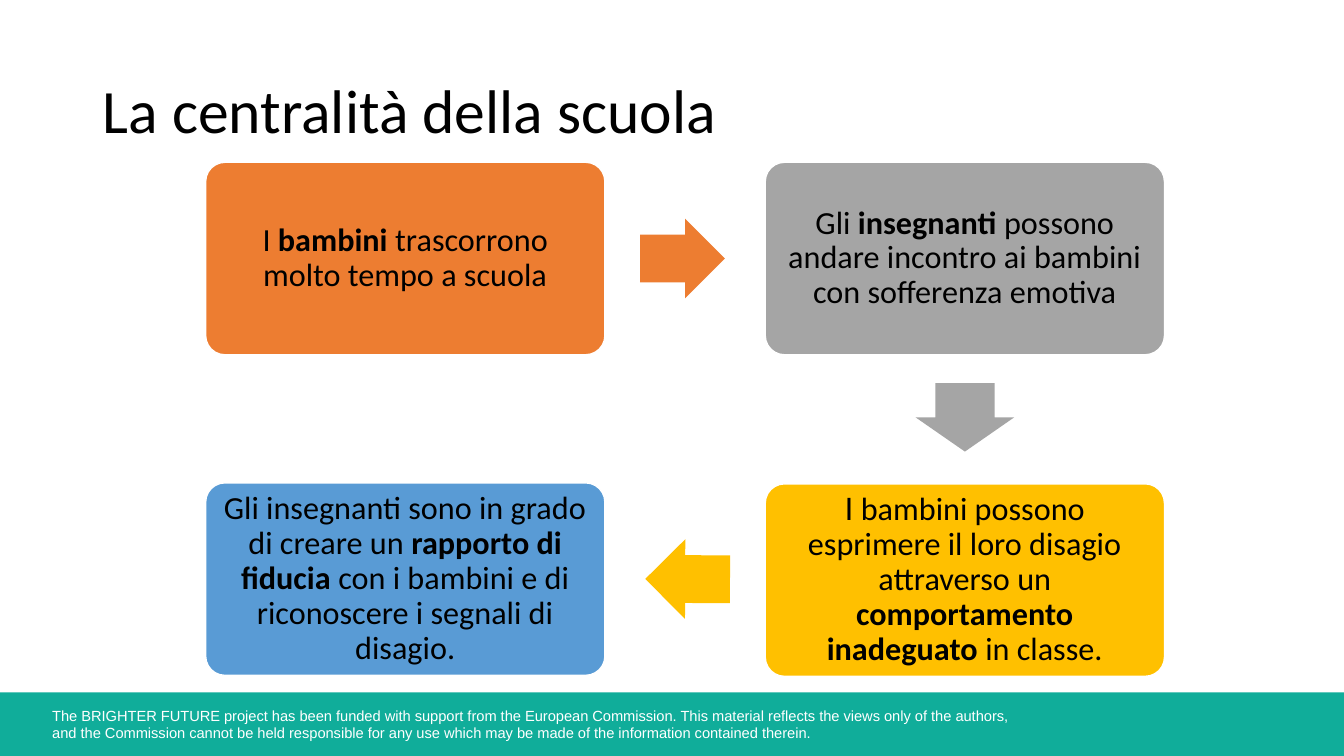
import pptx
import pptx.util
import pptx.dml.color
import pptx.enum.shapes
import pptx.enum.text

Inches = pptx.util.Inches
SHAPE = pptx.enum.shapes.MSO_SHAPE
ALIGN = pptx.enum.text.PP_ALIGN
ANCHOR = pptx.enum.text.MSO_ANCHOR

ORANGE, GREY, YELLOW, BLUE = "ED7D31", "A5A5A5", "FFC000", "599BD5"
LEFT, RIGHT = 2.04, 7.59
CARD_W, CARD_H = 3.96, 1.91

FOOTER = [
    "The BRIGHTER FUTURE project has been funded with support from the European Commission. "
    "This material reflects the views only of the authors, ",
    "and the Commission cannot be held responsible for any use which may be made of the "
    "information contained therein.",
]

# Each card: left, top, fill, runs as (text, format)
BOLD = {"bold": True}
CARDS = [
    (LEFT, 1.61, ORANGE, [("I ", {}), ("bambini ", BOLD), ("trascorrono molto tempo a scuola", {})]),
    (RIGHT, 1.61, GREY, [("Gli ", {}), ("insegnanti ", BOLD),
                         ("possono andare incontro ai bambini con sofferenza emotiva", {})]),
    (RIGHT, 4.8, YELLOW, [("I", {"font": "Arial"}),
                          (" bambini possono esprimere il loro disagio attraverso un ", {}),
                          ("comportamento inadeguato", BOLD), (" in classe.", {})]),
    (LEFT, 4.79, BLUE, [("Gli insegnanti sono in grado di creare un ", {}),
                        ("rapporto di fiducia", BOLD),
                        (" con i bambini e di riconoscere i segnali di disagio.", {})]),
]

# Each arrow: left, top, width, height, rotation, fill
ARROWS = [
    (6.35, 2.17, 0.84, 0.79, 0, ORANGE),
    (9.23, 3.65, 0.68, 0.98, 90, GREY),
    (6.4, 5.35, 0.84, 0.79, 180.2, YELLOW),
]


def rgb(hex_color):
    return pptx.dml.color.RGBColor.from_string(hex_color)


def add_run(p, text, size=23, font="Calibri", color="000000", bold=False):
    r = p.add_run()
    r.text = text
    r.font.size = pptx.util.Pt(size)
    r.font.name = font
    r.font.color.rgb = rgb(color)
    r.font.bold = bold


def set_frame(tf, anchor, side=0.1, edge=0.05):
    tf.word_wrap = True
    tf.auto_size = pptx.enum.text.MSO_AUTO_SIZE.NONE
    tf.vertical_anchor = anchor
    tf.margin_left = tf.margin_right = Inches(side)
    tf.margin_top = tf.margin_bottom = Inches(edge)


def add_block(s, kind, box, fill, line=None, adjust=()):
    sp = s.shapes.add_shape(kind, *map(Inches, box))
    sp.shadow.inherit = False
    sp.fill.solid()
    sp.fill.fore_color.rgb = rgb(fill)
    if line:
        sp.line.color.rgb = rgb(line)
        sp.line.width = pptx.util.Pt(1)
    else:
        sp.line.fill.background()
    for i, value in enumerate(adjust):
        sp.adjustments[i] = value
    return sp


def add_title(s, text):
    sp = s.shapes.title
    sp.left, sp.top, sp.width, sp.height = map(Inches, (0.92, 0.4, 11.5, 1.45))
    set_frame(sp.text_frame, ANCHOR.MIDDLE)
    p = sp.text_frame.paragraphs[0]
    p.alignment = ALIGN.LEFT
    p.line_spacing = 0.9
    add_run(p, text, size=44)


def add_footer(s, lines):
    add_block(s, SHAPE.RECTANGLE, (0, 6.87, 13.33, 0.63), "10AD9A")
    sp = s.shapes.add_textbox(*map(Inches, (0.42, 6.96, 10, 0.45)))
    set_frame(sp.text_frame, ANCHOR.TOP)
    p = sp.text_frame.paragraphs[0]
    for i, line in enumerate(lines):
        if i:
            p.add_line_break()
        add_run(p, line, size=10.5, font="Arial", color="FFFFFF")


def add_card(s, left, top, fill, runs):
    sp = add_block(s, SHAPE.ROUNDED_RECTANGLE, (left, top, CARD_W, CARD_H), fill, "FFFFFF", [0.1])
    # The preset's text area is already inset by its rounded corners
    set_frame(sp.text_frame, ANCHOR.MIDDLE, side=0.11, edge=0.1)
    p = sp.text_frame.paragraphs[0]
    p.alignment = ALIGN.CENTER
    p.line_spacing = 0.9
    for text, style in runs:
        add_run(p, text, **style)


def add_arrow(s, left, top, width, height, rotation, fill):
    sp = add_block(s, SHAPE.RIGHT_ARROW, (left, top, width, height), fill, adjust=[0.6, 0.5])
    sp.rotation = rotation


def main():
    prs = pptx.Presentation()
    prs.slide_width, prs.slide_height = Inches(13.33), Inches(7.5)
    s = prs.slides.add_slide(prs.slide_layouts[5])  # Title Only
    add_footer(s, FOOTER)
    add_title(s, "La centralità della scuola")
    for card in CARDS:
        add_card(s, *card)
    for arrow in ARROWS:
        add_arrow(s, *arrow)
    prs.save("out.pptx")


if __name__ == "__main__":
    main()
